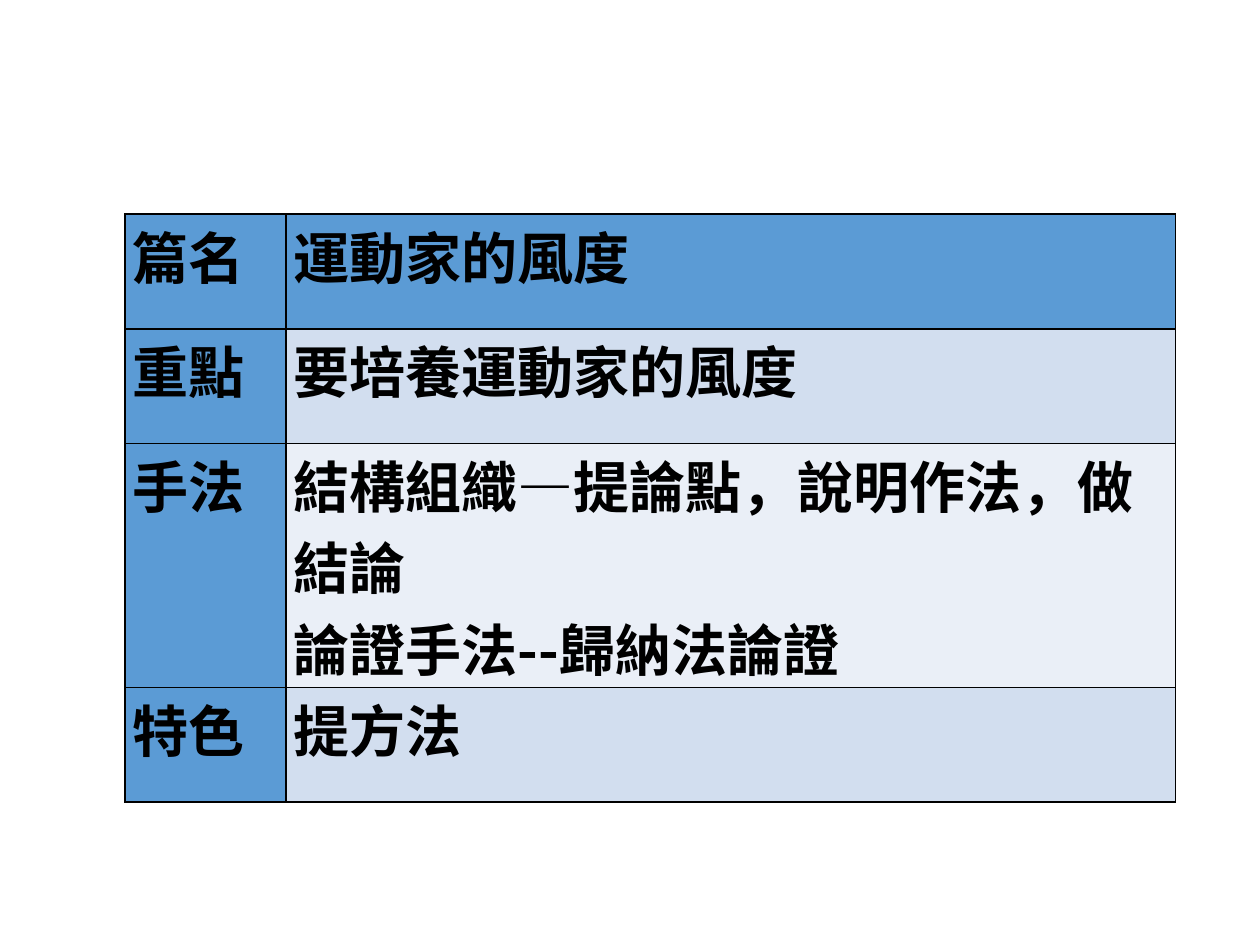
from lxml.etree import SubElement
from pptx import Presentation
from pptx.dml.color import RGBColor
from pptx.oxml.ns import qn
from pptx.util import Inches, Pt

FONT = "Noto Sans CJK SC"
BLACK = "000000"
HEADER = "5B9BD5"
BANDS = ["D2DEEF", "EAEFF7"]
COLUMNS = [1.28, 7.06]
ROWS = [
    (0.91, "篇名", "運動家的風度"),
    (0.91, "重點", "要培養運動家的風度"),
    (1.67, "手法", "結構組織—提論點，說明作法，做結論\n論證手法--歸納法論證"),
    (0.91, "特色", "提方法"),
]


def rgb(color):
    return RGBColor.from_string(color)


def set_borders(cell, color, width):
    tc_pr = cell._tc.get_or_add_tcPr()
    for side in ("a:lnL", "a:lnR", "a:lnT", "a:lnB"):
        ln = SubElement(tc_pr, qn(side), w=str(Pt(width)))
        fill = SubElement(ln, qn("a:solidFill"))
        SubElement(fill, qn("a:srgbClr"), val=color)


def style_paragraph(p):
    p.font.size = Pt(32)
    p.font.bold = True
    p.font.name = FONT
    p.font.color.rgb = rgb(BLACK)
    SubElement(p._p.pPr.find(qn("a:defRPr")), qn("a:ea"), typeface=FONT)


def fill_cell(cell, text, color):
    cell.text = text
    cell.margin_left = cell.margin_right = Inches(0.06)
    cell.margin_top = cell.margin_bottom = 0
    set_borders(cell, BLACK, 1)
    cell.fill.solid()
    cell.fill.fore_color.rgb = rgb(color)
    for p in cell.text_frame.paragraphs:
        style_paragraph(p)


def add_summary_table(slide):
    height = sum(row[0] for row in ROWS)
    table = slide.shapes.add_table(
        len(ROWS), len(COLUMNS), Inches(0.99), Inches(1.7),
        Inches(sum(COLUMNS)), Inches(height)).table
    for column, width in zip(table.columns, COLUMNS):
        column.width = Inches(width)
    for i, (row_height, label, content) in enumerate(ROWS):
        table.rows[i].height = Inches(row_height)
        fill_cell(table.cell(i, 0), label, HEADER)
        fill_cell(table.cell(i, 1), content,
                  BANDS[(i - 1) % 2] if i else HEADER)


def main():
    prs = Presentation()
    prs.slide_width = Inches(10)
    prs.slide_height = Inches(7.5)
    slide = prs.slides.add_slide(prs.slide_layouts[6])
    add_summary_table(slide)
    prs.save("out.pptx")


if __name__ == "__main__":
    main()
